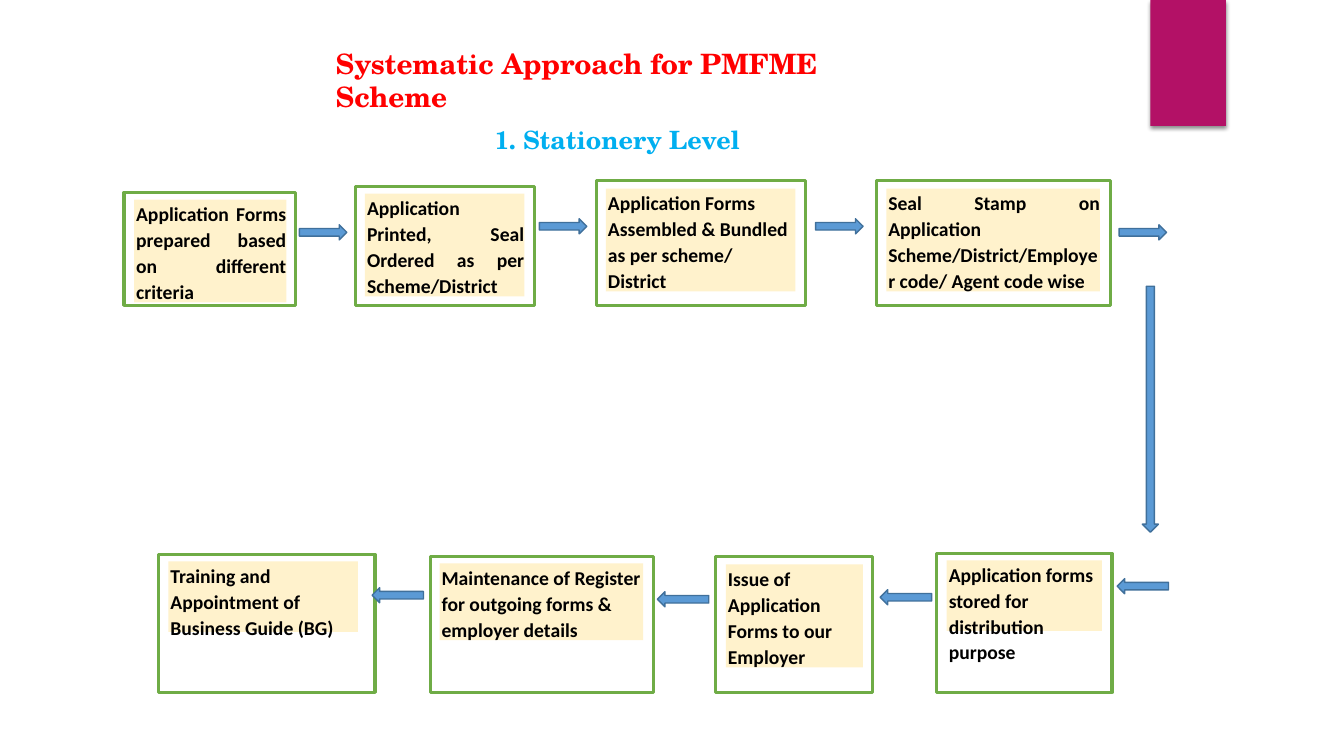
from lxml import etree
from pptx import Presentation
from pptx.dml.color import RGBColor
from pptx.enum.shapes import MSO_SHAPE
from pptx.enum.text import MSO_ANCHOR, PP_ALIGN
from pptx.oxml import parse_xml
from pptx.oxml.ns import nsdecls
from pptx.util import Inches, Pt

MAGENTA = RGBColor(0xB3, 0x11, 0x66)
GREEN = RGBColor(0x6F, 0xAC, 0x46)
CREAM = RGBColor(0xFF, 0xF2, 0xCC)
BLUE = RGBColor(0x5B, 0x9A, 0xD5)
DARK_BLUE = RGBColor(0x40, 0x70, 0x9B)
RED = RGBColor(0xFF, 0x00, 0x00)
SKY = RGBColor(0x00, 0xAF, 0xF0)
BLACK = RGBColor(0x00, 0x00, 0x00)

presentation = Presentation()
presentation.slide_width = Inches(13.33)
presentation.slide_height = Inches(7.5)
slide = presentation.slides.add_slide(presentation.slide_layouts[6])


def add_block(kind, box, fill=None, line=None, line_width=1):
    shape = slide.shapes.add_shape(kind, *[Inches(length) for length in box])
    shape.shadow.inherit = False
    if fill is None:
        shape.fill.background()
    else:
        shape.fill.solid()
        shape.fill.fore_color.rgb = fill
    if line is None:
        shape.line.fill.background()
    else:
        shape.line.color.rgb = line
        shape.line.width = Pt(line_width)
    return shape


def add_bold_run(paragraph, text, font_name, size, color):
    run = paragraph.add_run()
    run.text = text
    run.font.name = font_name
    run.font.size = Pt(size)
    run.font.bold = True
    run.font.color.rgb = color
    return run


# Corner panel with a soft shadow below
panel = add_block(MSO_SHAPE.RECTANGLE, (11.41, 0, 0.75, 1.25), MAGENTA)
effects = panel.element.spPr.find("{*}effectLst")
effects.append(parse_xml(
    f'<a:outerShdw {nsdecls("a")} blurRad="{Pt(3)}" dist="{Pt(2)}" dir="5400000">'
    '<a:srgbClr val="000000"><a:alpha val="45000"/></a:srgbClr></a:outerShdw>'))

# Heading
heading = slide.shapes.add_textbox(Inches(3.32), Inches(0.46), Inches(5.47), Inches(1.35))
frame = heading.text_frame
frame.word_wrap = True
frame.margin_left = Inches(0.01)
frame.margin_top = frame.margin_right = frame.margin_bottom = 0
title_run = add_bold_run(frame.paragraphs[0], "Systematic Approach for PMFME Scheme",
                         "TeX Gyre Schola", 20, RED)
title_run.font._element.set("spc", "-10")
subtitle = frame.add_paragraph()
subtitle._p.get_or_add_pPr().set("marL", str(Inches(1.58)))
subtitle.space_before = Pt(7.9)
add_bold_run(subtitle, "1. Stationery Level", "TeX Gyre Schola", 18, SKY)

# Steps: text, alignment, green frame, highlighted text area
JUSTIFY, LEFT = PP_ALIGN.JUSTIFY, PP_ALIGN.LEFT
steps = [
    ("Application Forms prepared based on different criteria", JUSTIFY,
     (1.23, 1.91, 1.7, 1.12), (1.33, 1.98, 1.51, 1.02)),
    ("Application Printed, Seal Ordered as per Scheme/District", JUSTIFY,
     (3.53, 1.85, 1.77, 1.18), (3.62, 1.92, 1.58, 1.02)),
    ("Application Forms Assembled & Bundled as per scheme/ District", LEFT,
     (5.92, 1.79, 2.07, 1.24), (6.01, 1.87, 1.88, 1.02)),
    ("Seal Stamp on Application Scheme/District/Employer code/ Agent code wise", JUSTIFY,
     (8.69, 1.79, 2.32, 1.24), (8.79, 1.87, 2.12, 1.02)),
    ("Application forms stored for distribution purpose", LEFT,
     (9.29, 5.49, 1.74, 1.38), (9.39, 5.56, 1.54, 0.7)),
    ("Issue of Application Forms to our Employer", LEFT,
     (7.1, 5.52, 1.55, 1.35), (7.2, 5.6, 1.36, 1.02)),
    ("Maintenance of Register for outgoing forms & employer details", LEFT,
     (4.27, 5.52, 2.21, 1.35), (4.36, 5.59, 2.02, 0.76)),
    ("Training and Appointment of Business Guide (BG)", LEFT,
     (1.57, 5.5, 2.15, 1.37), (1.67, 5.57, 1.88, 0.7)),
]
for text, alignment, outline_box, text_box in steps:
    add_block(MSO_SHAPE.RECTANGLE, outline_box, line=GREEN, line_width=2.25)
    highlight = add_block(MSO_SHAPE.RECTANGLE, text_box, CREAM)
    frame = highlight.text_frame
    frame.word_wrap = True
    frame.vertical_anchor = MSO_ANCHOR.TOP
    frame.margin_left = Inches(0.02)
    frame.margin_top = frame.margin_right = frame.margin_bottom = 0
    paragraph = frame.paragraphs[0]
    paragraph.alignment = alignment
    paragraph.line_spacing = 1.1
    add_bold_run(paragraph, text, "Calibri", 14, BLACK)

# Arrows: right along the top row, down the side, left along the bottom row
arrows = [(MSO_SHAPE.RIGHT_ARROW, (left, top, 0.47, 0.15))
          for left, top in [(2.97, 2.23), (5.35, 2.17), (8.09, 2.17), (11.1, 2.23)]]
arrows.append((MSO_SHAPE.DOWN_ARROW, (11.33, 2.84, 0.16, 2.44)))
arrows += [(MSO_SHAPE.LEFT_ARROW, (left, top, 0.51, 0.15))
           for left, top in [(11.08, 5.74), (8.73, 5.85), (6.52, 5.87), (3.69, 5.83)]]
for kind, box in arrows:
    add_block(kind, box, BLUE, DARK_BLUE)

presentation.save("out.pptx")
